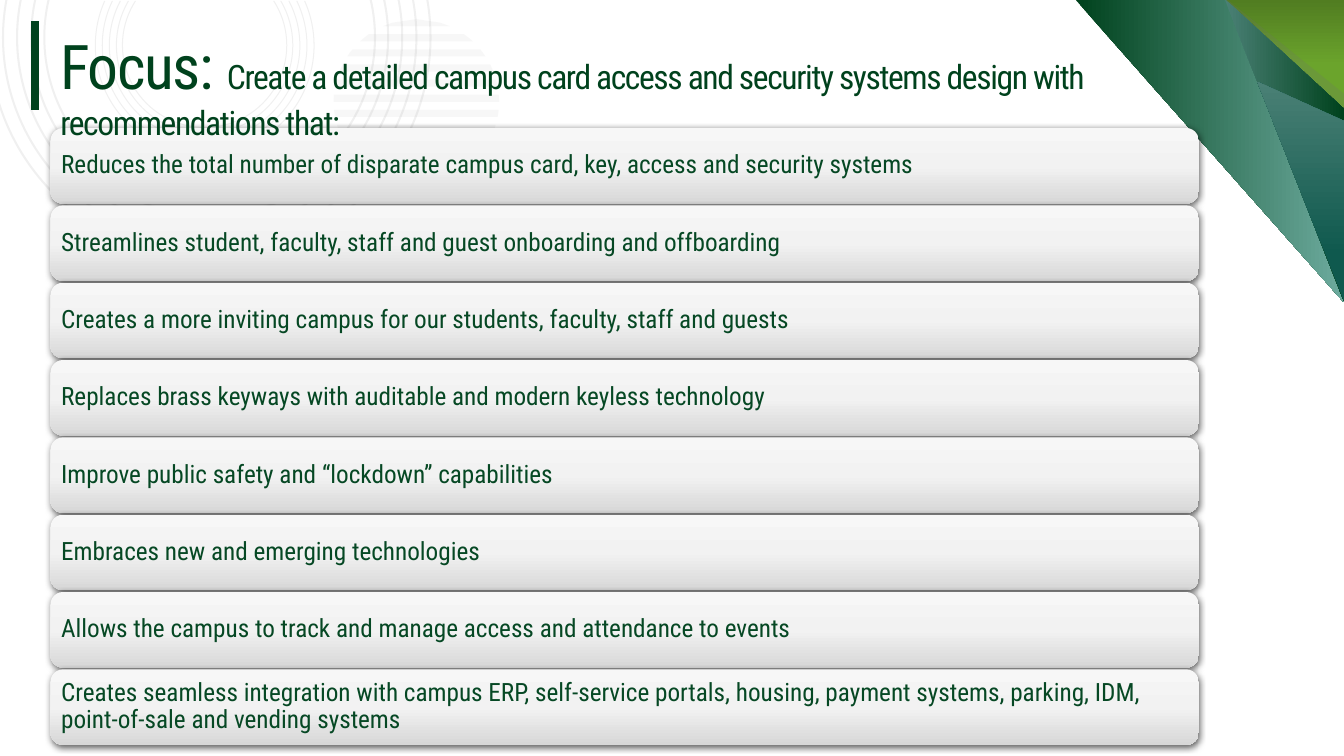
from dataclasses import dataclass
from math import acos, asin, cos, degrees, pi, sin, sqrt

from pptx import Presentation
from pptx.dml.color import RGBColor
from pptx.enum.shapes import MSO_CONNECTOR, MSO_SHAPE
from pptx.enum.text import MSO_ANCHOR, MSO_AUTO_SIZE, PP_ALIGN
from pptx.oxml import parse_xml
from pptx.oxml.ns import nsdecls, qn
from pptx.oxml.xmlchemy import OxmlElement
from pptx.util import Inches, Pt

ROUNDED = MSO_SHAPE.ROUNDED_RECTANGLE
STRAIGHT = MSO_CONNECTOR.STRAIGHT
MIDDLE = MSO_ANCHOR.MIDDLE
TOP = MSO_ANCHOR.TOP
LEFT = PP_ALIGN.LEFT
GROW = MSO_AUTO_SIZE.SHAPE_TO_FIT_TEXT


@dataclass(frozen=True)
class Theme:
    font: str = "Roboto Condensed"
    title: str = "00421D"
    body: str = "064824"
    ornament: str = "6F6F6F"
    bar: tuple = ((0, "F7F7F7"), (50, "F2F2F2"), (100, "D7D7D7"))
    mint: tuple = ((0, "00421D"), (100, "6DAB9E"))
    lime: tuple = ((40, "6BA42C"), (100, "517D21"))
    forest: tuple = ((0, "4A8075"), (100, "00421D"))
    teal: tuple = ((21, "0F594E"), (100, "4A8075"))
    lead_size: int = 44
    title_size: int = 24
    body_size: int = 18


THEME = Theme()

GOALS = (
    "Reduces the total number of disparate campus card, key, access and security systems",
    "Streamlines student, faculty, staff and guest onboarding and offboarding",
    "Creates a more inviting campus for our students, faculty, staff and guests",
    "Replaces brass keyways with auditable and modern keyless technology",
    "Improve public safety and “lockdown” capabilities",
    "Embraces new and emerging technologies",
    "Allows the campus to track and manage access and attendance to events",
    "Creates seamless integration with campus ERP, self-service portals, housing, "
    "payment systems, parking, IDM, point-of-sale and vending systems",
)


def fill_solid(shape, color, opacity):
    shape.fill.solid()
    shape.fill.fore_color.rgb = RGBColor.from_string(color)
    alpha = OxmlElement("a:alpha")
    alpha.set("val", str(opacity * 1000))
    shape._element.spPr.find(".//" + qn("a:srgbClr")).append(alpha)


def fill_gradient(shape, stops, angle):
    shape.fill.gradient()
    old = shape._element.spPr.find(qn("a:gradFill"))
    marks = "".join(
        f'<a:gs pos="{place * 1000}"><a:srgbClr val="{color}"/></a:gs>'
        for place, color in stops
    )
    new = parse_xml(
        f'<a:gradFill {nsdecls("a")} rotWithShape="1"><a:gsLst>{marks}</a:gsLst>'
        f'<a:lin ang="{angle * 60000}" scaled="0"/></a:gradFill>'
    )
    old.getparent().replace(old, new)


def add_shadow(shape):
    shape.shadow.inherit = False
    shape._element.spPr.find(qn("a:effectLst")).append(parse_xml(
        f'<a:outerShdw {nsdecls("a")} blurRad="{Pt(4.5)}" dist="{Pt(1.5)}" '
        'dir="5400000" algn="ctr" rotWithShape="0"><a:srgbClr val="000000">'
        '<a:alpha val="63000"/></a:srgbClr></a:outerShdw>'
    ))


def add_polygon(page, points):
    corners = [(Inches(x), Inches(y)) for x, y in points]
    builder = page.shapes.build_freeform(*corners[0])
    builder.add_line_segments(corners[1:], close=True)
    shape = builder.convert_to_shape()
    shape.shadow.inherit = False
    shape.line.fill.background()
    return shape


def arc_angles(center, radius, top):
    x, y = center
    start = asin((top - y) / radius)
    end = acos(-x / radius) if radius > x else pi - start
    quarters = [angle for angle in (0, pi / 2, pi) if start < angle < end]
    return [start, *quarters, end]


def round_segments(segments, radius, start, end):
    arc = OxmlElement("a:arcTo")
    arc.set("wR", str(Inches(radius)))
    arc.set("hR", str(Inches(radius)))
    arc.set("stAng", str(round(degrees(start) % 360 * 60000)))
    arc.set("swAng", str(round(degrees(end - start) * 60000)))
    segments[0].addprevious(arc)
    for segment in segments:
        segment.getparent().remove(segment)


def add_ring(page, center, radius, thickness, top):
    inner_radius = radius - thickness
    outer = arc_angles(center, radius, top)
    inner = arc_angles(center, inner_radius, top)[::-1]
    x, y = center
    ring = add_polygon(page, [
        (x + size * cos(angle), y + size * sin(angle))
        for size, angles in ((radius, outer), (inner_radius, inner))
        for angle in angles
    ])
    segments = list(ring._element.spPr.iter(qn("a:lnTo")))
    round_segments(segments[:len(outer) - 1], radius, outer[0], outer[-1])
    round_segments(segments[len(outer):], inner_radius, inner[0], inner[-1])
    fill_solid(ring, THEME.ornament, 10)


def add_rings(page, center, radii, thickness, top):
    for radius in radii:
        add_ring(page, center, radius, thickness, top)


def add_striped_disc(page, center, radius, count, pitch, height):
    x, y = center
    for index in range(count):
        top = y - radius + index * pitch
        levels = (top, top + height / 2, top + height)
        edges = [(sqrt(max(0, radius**2 - (level - y)**2)), level) for level in levels]
        right = [(x + half, level) for half, level in edges]
        left = [(x - half, level) for half, level in reversed(edges)]
        fill_solid(add_polygon(page, right + left), THEME.ornament, 5)


def add_facet(page, points, stops, angle):
    fill_gradient(add_polygon(page, points), stops, angle)


def add_corner_facets(page):
    add_facet(page, [(10.67, 0), (12.48, 0), (13.33, 2.98), (13.33, 3)], THEME.mint, 0)
    add_facet(page, [(12.16, 0), (13.33, 0), (13.33, 1.08)], THEME.lime, 270)
    shade = add_polygon(page, [(12.16, 0), (12.18, 0), (13.33, 0.93), (13.33, 1.08)])
    fill_solid(shade, THEME.ornament, 20)
    add_facet(page, [(12.15, 0), (12.16, 0), (13.33, 1.08), (13.33, 2.99)], THEME.forest, 0)
    add_facet(page, [(12.47, 0.81), (13.33, 1.2), (13.33, 2.99)], THEME.teal, 270)


def style_span(span, size, color):
    span.font.name = THEME.font
    span.font.size = Pt(size)
    span.font.color.rgb = RGBColor.from_string(color)


def add_goal_bar(page, top, goal):
    bar = page.shapes.add_shape(ROUNDED, Inches(0.5), Inches(top), Inches(11.39), Inches(0.75))
    fill_gradient(bar, THEME.bar, 90)
    bar.line.fill.background()
    add_shadow(bar)
    frame = bar.text_frame
    frame.text = goal
    frame.word_wrap = True
    frame.vertical_anchor = MIDDLE
    frame.margin_left = frame.margin_right = Inches(0.07)
    frame.margin_top = frame.margin_bottom = Inches(0.03)
    para = frame.paragraphs[0]
    para.alignment = LEFT
    para.line_spacing = 0.9
    style_span(para.runs[0], THEME.body_size, THEME.body)


def add_title(page, lead, statement):
    box = page.shapes.add_textbox(Inches(0.5), Inches(0.23), Inches(10.96), Inches(0.84))
    frame = box.text_frame
    frame.word_wrap = True
    frame.auto_size = GROW
    frame.vertical_anchor = TOP
    para = frame.paragraphs[0]
    for text, size in ((lead, THEME.lead_size), (statement, THEME.title_size)):
        span = para.add_run()
        span.text = text
        style_span(span, size, THEME.title)
        span.font._element.set("spc", "-100")


def add_accent_line(page):
    line = page.shapes.add_connector(
        STRAIGHT, Inches(0.35), Inches(0.21), Inches(0.35), Inches(1.09))
    line.line.width = Pt(6)
    line.line.color.rgb = RGBColor.from_string(THEME.title)
    line._element.spPr.append(OxmlElement("a:effectLst"))


def main():
    deck = Presentation()
    deck.slide_width, deck.slide_height = Inches(13.33), Inches(7.5)
    page = deck.slides.add_slide(deck.slide_layouts[6])
    add_rings(page, (2.03, 0.45), (1.09, 1.02, 0.95, 0.88, 0.82), 0.01, 0.01)
    add_rings(page, (2.08, 0.37), (2.2, 2.06, 1.92, 1.78, 1.65), 0.02, 0)
    add_striped_disc(page, (4.13, 1.01), 0.82, 11, 0.15, 0.07)
    add_corner_facets(page)
    first, last = 1.27, 6.64
    pitch = (last - first) / (len(GOALS) - 1)
    for index, goal in enumerate(GOALS):
        add_goal_bar(page, first + index * pitch, goal)
    add_title(
        page, "Focus: ",
        "Create a detailed campus card access and security systems design "
        "with recommendations that:")
    add_accent_line(page)
    deck.save("out.pptx")


if __name__ == "__main__":
    main()
